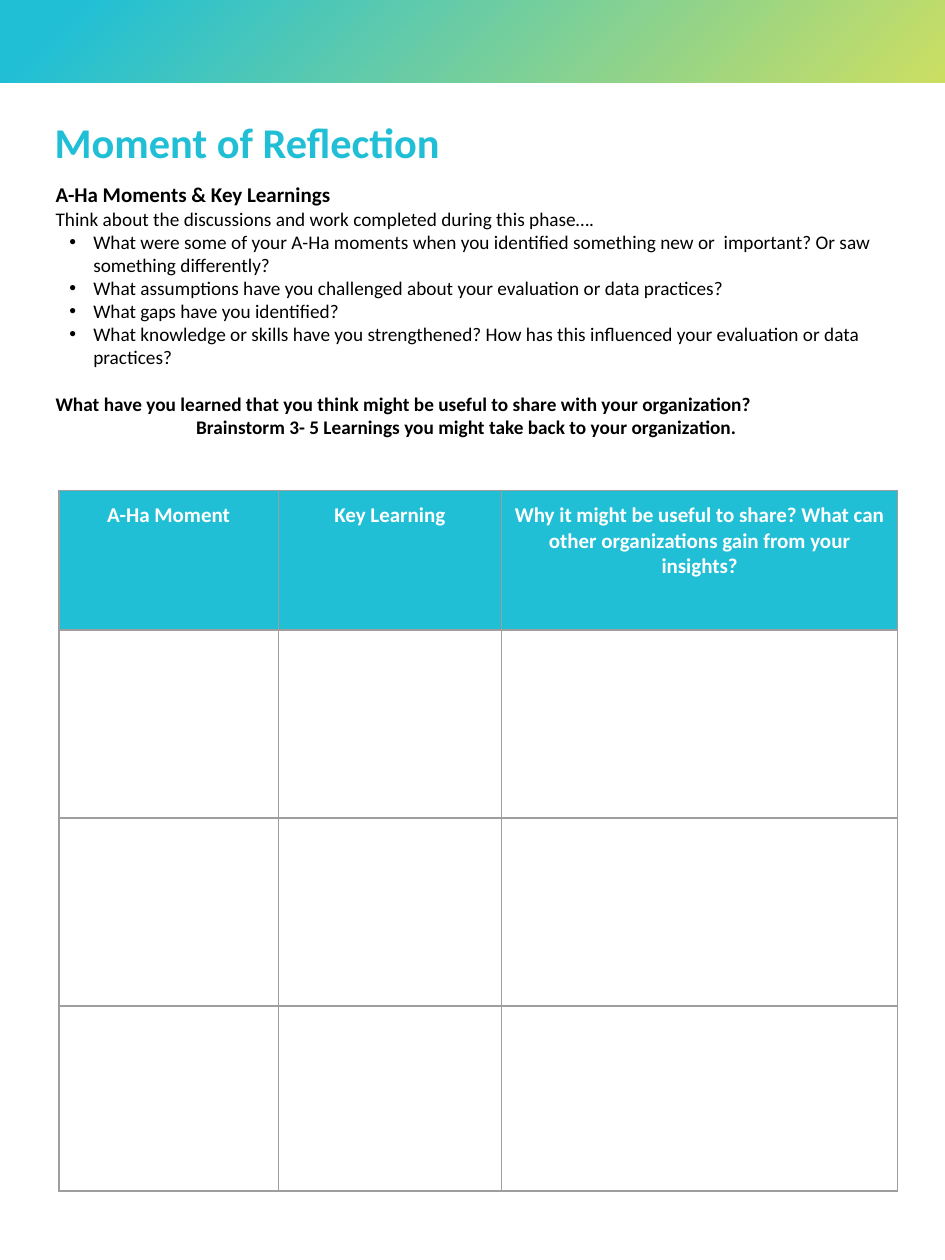
from copy import deepcopy

from lxml import etree
from pptx import Presentation
from pptx.dml.color import RGBColor
from pptx.enum.shapes import MSO_SHAPE
from pptx.enum.text import MSO_ANCHOR, MSO_AUTO_SIZE, PP_ALIGN
from pptx.oxml.ns import qn
from pptx.util import Cm, Pt

RECTANGLE = MSO_SHAPE.RECTANGLE
LEFT, CENTER = PP_ALIGN.LEFT, PP_ALIGN.CENTER
TOP, MIDDLE = MSO_ANCHOR.TOP, MSO_ANCHOR.MIDDLE
NO_FIT = MSO_AUTO_SIZE.NONE

COLORS = {
    "teal": "20BFD6",
    "lime": "CCDE62",
    "text": "000000",
    "white": "FFFFFF",
    "border": "9E9E9E",
}
FONT = "Calibri"

QUESTIONS = [
    "What were some of your A-Ha moments when you identified something new or  important? Or saw something differently?",
    "What assumptions have you challenged about your evaluation or data practices?",
    "What gaps have you identified?",
    "What knowledge or skills have you strengthened? How has this influenced your evaluation or data practices?",
]
HEADERS = [
    "A-Ha Moment",
    "Key Learning",
    "Why it might be useful to share? What can other organizations gain from your insights?",
]
COLUMN_WIDTHS = [4.42, 4.5, 7.99]
ROW_HEIGHTS = [2.82, 3.79, 3.79, 3.73]


def rgb(name):
    return RGBColor.from_string(COLORS[name])


class Worksheet:
    """Holds the slide being built and the way its elements are styled."""

    def __init__(self, slide):
        self.slide = slide

    def place(self, shape, left, top, width, height):
        shape.left, shape.top = Cm(left), Cm(top)
        shape.width, shape.height = Cm(width), Cm(height)

    def frame(self, shape, anchor, side, edge):
        frame = shape.text_frame
        frame.word_wrap = True
        frame.auto_size = NO_FIT
        frame.vertical_anchor = anchor
        frame.margin_left = frame.margin_right = Cm(side)
        frame.margin_top = frame.margin_bottom = Cm(edge)
        return frame

    def add_span(self, para, text, size, color="text", bold=False, align=LEFT):
        para.alignment = align
        span = para.add_run()
        span.text = text
        font = span.font
        font.name, font.size, font.bold = FONT, Pt(size), bold
        font.color.rgb = rgb(color)

    def band(self, left, top, width, height):
        """Draw a diagonal gradient that stays teal for its first 8 %."""
        shape = self.slide.shapes.add_shape(
            RECTANGLE, Cm(left), Cm(top), Cm(width), Cm(height))
        shape.shadow.inherit = False
        shape.line.fill.background()
        shape.fill.gradient()
        shape.fill.gradient_angle = 315
        first = shape._element.spPr.find(".//" + qn("a:gs"))
        first.addnext(deepcopy(first))
        stops = [(0, "teal"), (0.08, "teal"), (1, "lime")]
        for stop, (position, color) in zip(shape.fill.gradient_stops, stops):
            stop.position = position
            stop.color.rgb = rgb(color)

    def title(self, text, left, top, width, height):
        box = self.slide.shapes.title
        self.place(box, left, top, width, height)
        para = self.frame(box, MIDDLE, 0.25, 0.13).paragraphs[0]
        para.line_spacing = 0.9
        self.add_span(para, text, 24.2, "teal", True)

    def body(self, left, top, width, height):
        box = self.slide.placeholders[1]
        self.place(box, left, top, width, height)
        return self.frame(box, TOP, 0.15, 0.08)

    def paragraph(self, frame, text, size=11, bold=False, align=LEFT,
                  bullet=False, before=0):
        first = frame.paragraphs[0]
        para = frame.add_paragraph() if first.runs else first
        para.space_before, para.space_after = Pt(before), Pt(0)
        para.line_spacing = 1.0
        self.add_span(para, text, size, bold=bold, align=align)
        properties = para._p.get_or_add_pPr()
        properties.set("marL", str(Cm(0.76) if bullet else 0))
        properties.set("indent", str(Cm(-0.48) if bullet else 0))
        if bullet:
            para.level = 1
            etree.SubElement(properties, qn("a:buFont"), typeface="Arial")
            etree.SubElement(properties, qn("a:buChar"), char="•")
        else:
            etree.SubElement(properties, qn("a:buNone"))

    def border(self, cell):
        properties = cell._tc.get_or_add_tcPr()
        for index, side in enumerate(("a:lnL", "a:lnR", "a:lnT", "a:lnB")):
            line = etree.Element(qn(side), w=str(Pt(0.75)))
            fill = etree.SubElement(line, qn("a:solidFill"))
            etree.SubElement(fill, qn("a:srgbClr"), val=COLORS["border"])
            properties.insert(index, line)

    def table(self, left, top, headers, widths, heights):
        table = self.slide.shapes.add_table(
            len(heights), len(widths), Cm(left), Cm(top),
            Cm(sum(widths)), Cm(sum(heights))).table
        table.horz_banding = False
        for column, width in zip(table.columns, widths):
            column.width = Cm(width)
        for row, height in zip(table.rows, heights):
            row.height = Cm(height)
        for cell in table.iter_cells():
            cell.margin_left = cell.margin_right = Cm(0.25)
            cell.margin_top = cell.margin_bottom = Cm(0.25)
            cell.fill.solid()
            cell.fill.fore_color.rgb = rgb("white")
            self.border(cell)
        for cell, text in zip(table.rows[0].cells, headers):
            cell.fill.fore_color.rgb = rgb("teal")
            self.add_span(cell.text_frame.paragraphs[0], text, 12,
                          "white", True, CENTER)


def main():
    deck = Presentation()
    deck.slide_width, deck.slide_height = Cm(19.05), Cm(25.4)
    page = Worksheet(deck.slides.add_slide(deck.slide_layouts[1]))

    page.band(0, -0.08, 19.05, 1.75)
    page.title("Moment of Reflection", 0.85, 2.21, 16.43, 1.4)

    body = page.body(0.97, 3.58, 16.87, 6.3)
    page.paragraph(body, "A-Ha Moments & Key Learnings", size=12, bold=True)
    page.paragraph(body, "Think about the discussions and work completed during this phase….")
    for question in QUESTIONS:
        page.paragraph(body, question, bullet=True)
    page.paragraph(
        body, "What have you learned that you think might be useful to share with your organization?",
        bold=True, before=13.4)
    page.paragraph(
        body, "Brainstorm 3- 5 Learnings you might take back to your organization.",
        bold=True, align=CENTER)

    page.table(1.19, 9.88, HEADERS, COLUMN_WIDTHS, ROW_HEIGHTS)
    deck.save("out.pptx")


if __name__ == "__main__":
    main()
